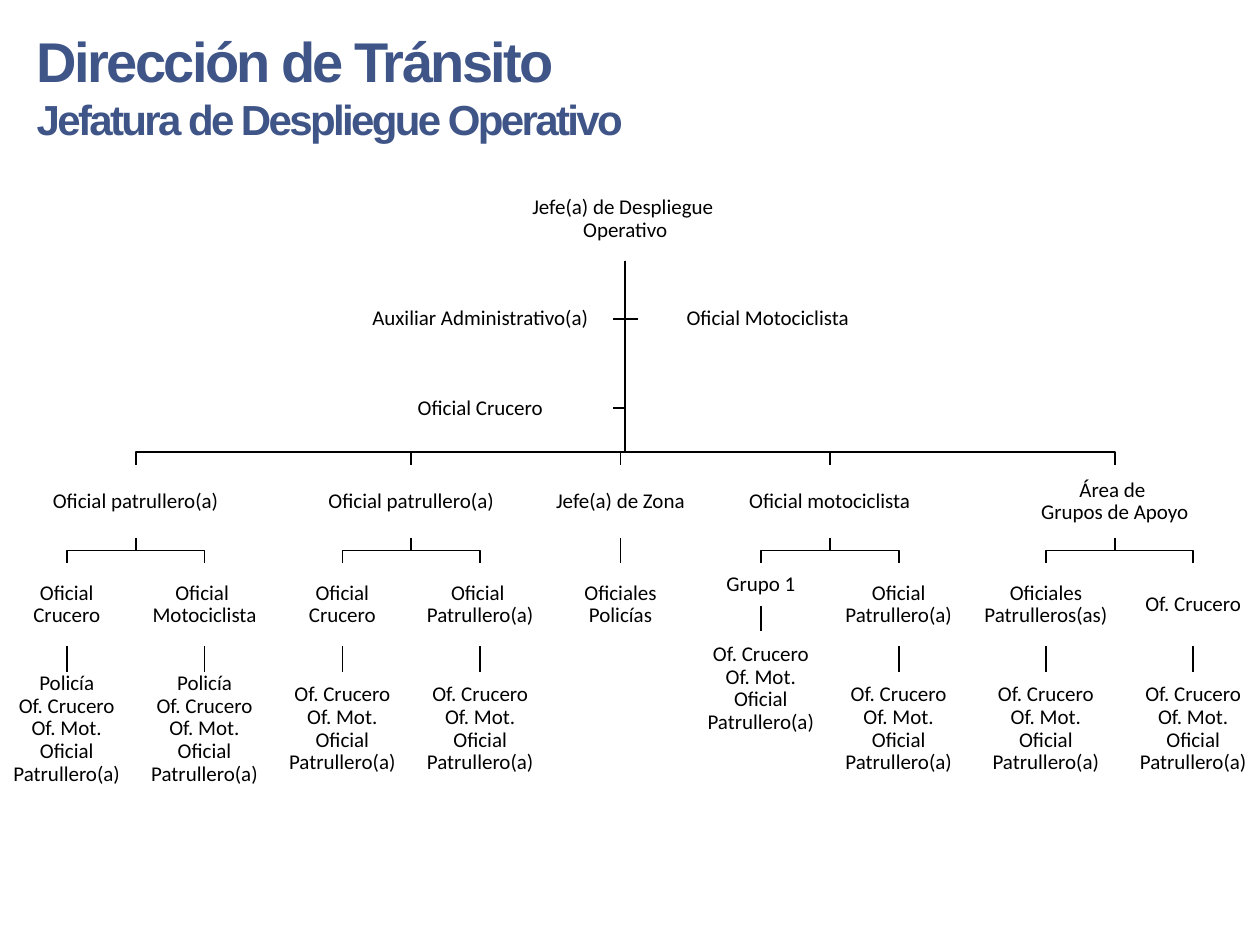
from lxml import etree
from pptx import Presentation
from pptx.dml.color import RGBColor
from pptx.enum.shapes import MSO_CONNECTOR, MSO_SHAPE
from pptx.enum.text import MSO_ANCHOR, MSO_AUTO_SIZE, PP_ALIGN
from pptx.oxml.ns import qn
from pptx.util import Inches, Pt

COLORS = {"title": "3F5588", "text": "000000", "line": "000000", "box": "FFFFFF"}

# Box sizes and gaps of the chart, in inches
ROOT_W, ROOT_H = 2.52, 0.66
AIDE_W, AIDE_H = 2.1, 0.52
BRANCH_W, BRANCH_H = 1.36, 0.58
LEAF_W, LEAF_H = 0.9, 0.66
TEAM_W, TEAM_H = 0.9, 0.91
ROW_GAP, SPINE_GAP = 0.2, 0.1
BRANCH_DROP = 2.28

TEAM = ["Of. Crucero", "Of. Mot.", "Oficial Patrullero(a)"]
POLICE_TEAM = ["Policía"] + TEAM


def leaf(lines, team=TEAM, w=LEAF_W, h=LEAF_H):
    return {"lines": lines, "team": team, "w": w, "h": h}


ROOT = ["Jefe(a) de Despliegue ", "Operativo"]
# (label, side of the spine, row)
AIDES = [
    ("Auxiliar Administrativo(a)", -1, 0),
    ("Oficial Motociclista ", 1, 0),
    ("Oficial Crucero", -1, 1),
]
BRANCHES = [
    (["Oficial patrullero(a)"],
     [leaf(["Oficial", "Crucero"], POLICE_TEAM),
      leaf(["Oficial ", "Motociclista"], POLICE_TEAM)]),
    (["Oficial patrullero(a)"],
     [leaf(["Oficial", "Crucero"]), leaf(["Oficial ", "Patrullero(a)"])]),
    (["Jefe(a) de Zona"],
     [leaf(["Oficiales", "Policías"], None, w=0.94)]),
    (["Oficial motociclista"],
     [leaf(["Grupo 1"], h=0.34), leaf(["Oficial", "Patrullero(a)"])]),
    (["Área de ", "Grupos de Apoyo"],
     [leaf(["Oficiales", "Patrulleros(as)"], w=1.05), leaf(["Of. Crucero"])]),
]


def write(tf, lines, sizes=(12,), font="Calibri", color="text", bold=False,
          align=PP_ALIGN.CENTER, line_spacing=0.9, tracking=None):
    """Write one paragraph per line; the last size serves all further lines."""
    tf.word_wrap = True
    for i, line in enumerate(lines):
        p = tf.paragraphs[0] if i == 0 else tf.add_paragraph()
        p.alignment = align
        p.line_spacing = line_spacing
        r = p.add_run()
        r.text = line
        r.font.size = Pt(sizes[min(i, len(sizes) - 1)])
        r.font.name = font
        r.font.bold = bold
        r.font.color.rgb = RGBColor.from_string(COLORS[color])
        if tracking is not None:
            r.font._element.set("spc", str(int(tracking * 100)))


def add_box(s, cx, top, w, h, lines):
    sp = s.shapes.add_shape(MSO_SHAPE.RECTANGLE, Inches(cx - w / 2), Inches(top),
                            Inches(w), Inches(h))
    sp.shadow.inherit = False
    sp.fill.solid()
    sp.fill.fore_color.rgb = RGBColor.from_string(COLORS["box"])
    sp.line.fill.background()
    tf = sp.text_frame
    tf.margin_left = tf.margin_right = tf.margin_top = tf.margin_bottom = Inches(0.01)
    tf.vertical_anchor = MSO_ANCHOR.MIDDLE
    write(tf, lines)
    return sp


def style_line(line):
    line.color.rgb = RGBColor.from_string(COLORS["line"])
    line.width = Pt(1)


def add_path(s, *points):
    (x, y), *rest = [(Inches(px), Inches(py)) for px, py in points]
    builder = s.shapes.build_freeform(x, y)
    builder.add_line_segments(rest, close=False)
    sp = builder.convert_to_shape()
    sp.shadow.inherit = False
    sp.fill.background()
    style_line(sp.line)


def add_elbow(s, x1, y1, x2, y2):
    """Go down, turn half a row gap above the lower box, and go down again."""
    turn = y2 - ROW_GAP / 2
    add_path(s, (x1, y1), (x1, turn), (x2, turn), (x2, y2))


def join_down(s, upper, lower):
    cxn = s.shapes.add_connector(MSO_CONNECTOR.STRAIGHT, 0, 0, 0, 0)
    cxn.begin_connect(upper, 2)
    cxn.end_connect(lower, 0)
    style_line(cxn.line)
    etree.SubElement(cxn._element.spPr, qn("a:effectLst"))


def add_title(s, left, top, w, h):
    sp = s.shapes.title
    sp.left, sp.top, sp.width, sp.height = map(Inches, (left, top, w, h))
    tf = sp.text_frame
    tf.vertical_anchor = MSO_ANCHOR.TOP
    tf.auto_size = MSO_AUTO_SIZE.SHAPE_TO_FIT_TEXT
    write(tf, ["Dirección de Tránsito", "Jefatura de Despliegue Operativo"],
          sizes=(32, 24), font="Arial", color="title", bold=True,
          align=PP_ALIGN.LEFT, line_spacing=1.0, tracking=-1.5)


def add_branch(s, left, top, gap, lines, leaves):
    """Draw a branch centred over its leaves; return its centre and right edge."""
    right = left + sum(lf["w"] for lf in leaves) + gap * (len(leaves) - 1)
    cx = (left + right) / 2
    branch = add_box(s, cx, top, BRANCH_W, BRANCH_H, lines)
    leaf_top = top + BRANCH_H + ROW_GAP
    x = left
    for lf in leaves:
        leaf_cx = x + lf["w"] / 2
        box = add_box(s, leaf_cx, leaf_top, lf["w"], lf["h"], lf["lines"])
        if len(leaves) == 1:
            join_down(s, branch, box)
        else:
            add_elbow(s, cx, top + BRANCH_H, leaf_cx, leaf_top)
        if lf["team"]:
            team = add_box(s, leaf_cx, leaf_top + lf["h"] + ROW_GAP,
                           TEAM_W, TEAM_H, lf["team"])
            join_down(s, box, team)
        x += lf["w"] + gap
    return cx, right


def add_org_chart(s, left, top, w):
    # Branches, with equal gaps between all leaves
    widths = [lf["w"] for _, leaves in BRANCHES for lf in leaves]
    gap = (w - sum(widths)) / (len(widths) - 1)
    centres, x = [], left
    for lines, leaves in BRANCHES:
        cx, right = add_branch(s, x, top + BRANCH_DROP, gap, lines, leaves)
        centres.append(cx)
        x = right + gap

    # Head of the chart, midway between the outer branches
    spine = (centres[0] + centres[-1]) / 2
    spine_top = top + ROOT_H
    add_box(s, spine, top, ROOT_W, ROOT_H, ROOT)
    for cx in centres:
        add_elbow(s, spine, spine_top, cx, top + BRANCH_DROP)

    # Aides beside the spine
    for label, side, row in AIDES:
        aide_top = spine_top + ROW_GAP + row * (AIDE_H + 0.19)
        mid = aide_top + AIDE_H / 2
        edge = spine + side * SPINE_GAP
        add_box(s, edge + side * AIDE_W / 2, aide_top, AIDE_W, AIDE_H, [label])
        add_path(s, (spine, spine_top), (spine, mid), (edge, mid))


def main():
    prs = Presentation()
    prs.slide_width, prs.slide_height = Inches(10), Inches(7.5)
    s = prs.slides.add_slide(prs.slide_layouts[5])
    add_title(s, 0.19, 0.16, 7.46, 1.04)
    add_org_chart(s, 0.08, 1.41, 9.84)
    prs.save("out.pptx")


if __name__ == "__main__":
    main()
